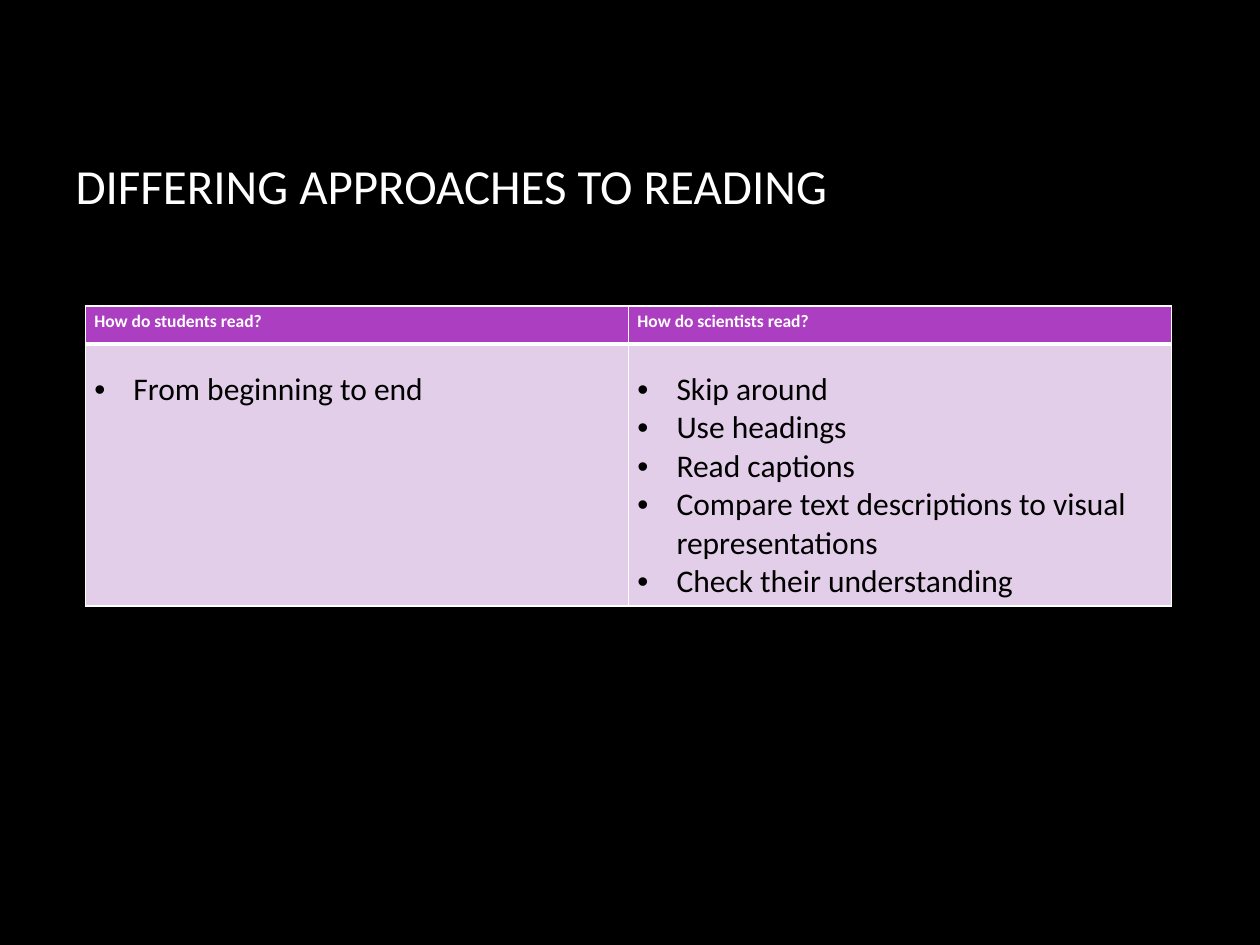
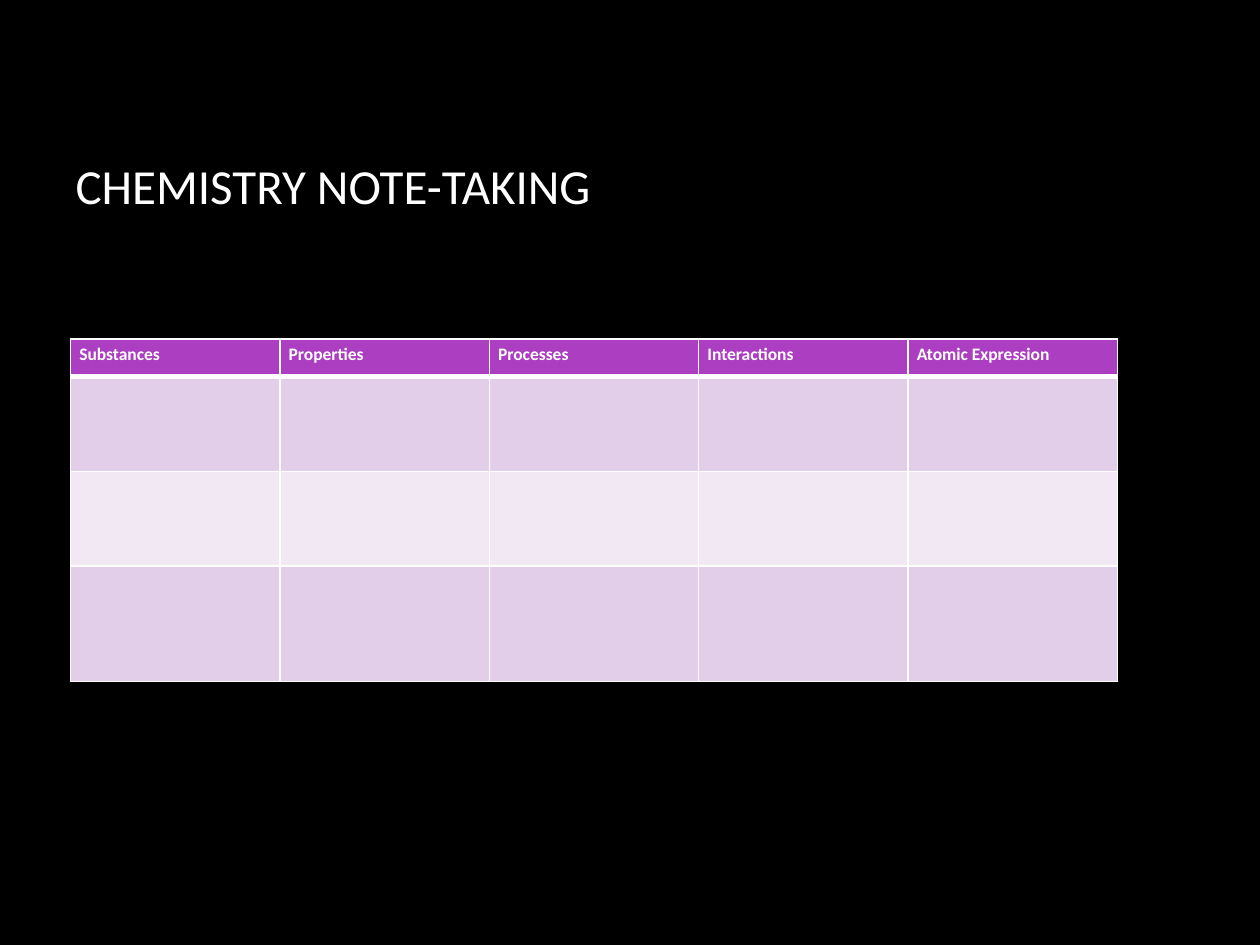
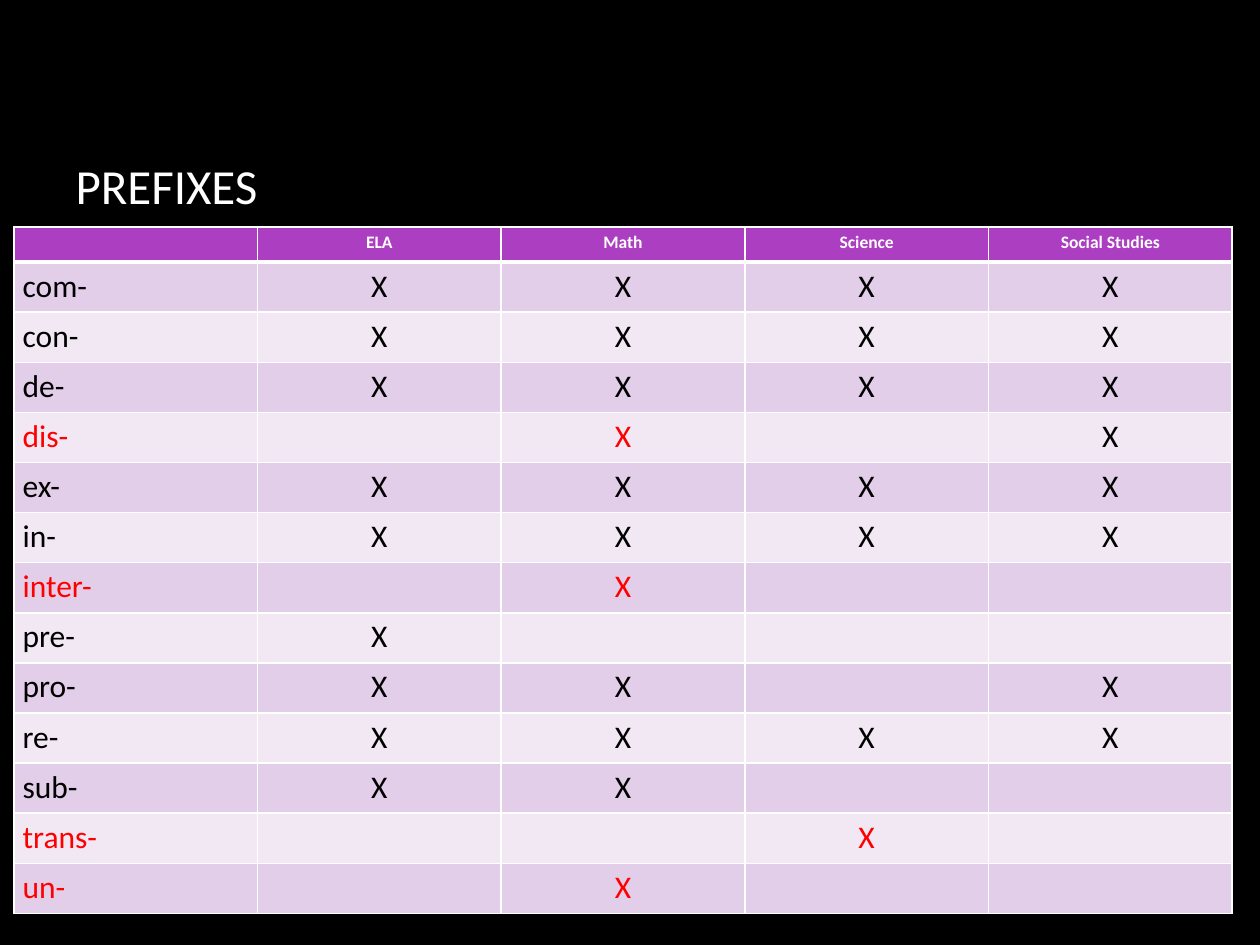
import lxml.etree
import pptx
import pptx.dml.color
import pptx.enum.text
import pptx.oxml.ns
import pptx.util

COLS, ROWS = 100, 75
HUES = {"back": "000000", "text": "000000", "line": "FFFFFF", "head": "AC3EC1",
        "odd": "E3CEE9", "even": "F1E8F4", "red": "FF0000"}
TITLE = {"name": "Calibri", "size": pptx.util.Pt(28), "bold": False}
HEAD = {"name": "Calibri", "size": pptx.util.Pt(10), "bold": True}
BODY = {"name": "Calibri", "size": pptx.util.Pt(18), "bold": False}
ALIGN = pptx.enum.text.PP_ALIGN
PADS = {"margin_left": 0.7, "margin_right": 0.7, "margin_top": 0.4, "margin_bottom": 0.4}


def hue(code):
    return pptx.dml.color.RGBColor.from_string(code)


def put(item, vals):
    for key, val in vals.items():
        setattr(item, key, val)


def node(root, tag, **vals):
    return lxml.etree.SubElement(root, pptx.oxml.ns.qn(tag), vals)


class Deck:
    def __init__(self):
        self.show = pptx.Presentation()
        self.show.slide_width = pptx.util.Inches(10)
        self.show.slide_height = pptx.util.Inches(7.5)
        self.wide = self.show.slide_width / COLS
        self.high = self.show.slide_height / ROWS
        fill = self.show.slide_master.background.fill
        fill.solid()
        fill.fore_color.rgb = hue(HUES["back"])
        self.slide = None

    def x(self, num):
        return round(num * self.wide)

    def y(self, num):
        return round(num * self.high)

    def label(self, para, text, style, code):
        run = para.add_run()
        run.text = text
        put(run.font, style)
        run.font.color.rgb = hue(code)

    def page(self, text):
        self.slide = self.show.slides.add_slide(self.show.slide_layouts[5])
        box = self.slide.shapes.title
        put(box, {"left": self.x(5), "top": self.y(6.7),
                  "width": self.x(85), "height": self.y(15.9)})
        put(box.text_frame, {"vertical_anchor": pptx.enum.text.MSO_ANCHOR.MIDDLE,
                             "auto_size": pptx.enum.text.MSO_AUTO_SIZE.NONE,
                             "word_wrap": True})
        para = box.text_frame.paragraphs[0]
        para.alignment = ALIGN.LEFT
        self.label(para, text, TITLE, HUES["line"])

    def table(self, left, top, width, highs, heads, align=ALIGN.LEFT):
        shape = self.slide.shapes.add_table(
            len(highs), len(heads), self.x(left), self.y(top),
            self.x(width), self.y(sum(highs)))
        table = shape.table
        table.horz_banding = False
        for col in table.columns:
            col.width = self.x(width / len(heads))
        for num, high in enumerate(highs):
            table.rows[num].height = self.y(high)
            for cell in table.rows[num].cells:
                self.cell(cell, num)
        for cell, name in zip(table.rows[0].cells, heads):
            self.text(cell, name, HEAD, HUES["line"], align)
        return table

    def cell(self, cell, row):
        put(cell, {key: self.x(val) for key, val in PADS.items()})
        prop = cell._tc.get_or_add_tcPr()
        for side in "LRTB":
            thick = (row, side) in ((0, "B"), (1, "T"))
            line = node(prop, "a:ln" + side, w=str(int(pptx.util.Pt(3 if thick else 1))))
            node(node(line, "a:solidFill"), "a:srgbClr", val=HUES["line"])
        cell.fill.solid()
        name = "head" if row == 0 else "odd" if row % 2 else "even"
        cell.fill.fore_color.rgb = hue(HUES[name])

    def text(self, cell, text, style=BODY, code=HUES["text"], align=ALIGN.LEFT):
        para = cell.text_frame.paragraphs[0]
        para.alignment = align
        if text:
            self.label(para, text, style, code)
        else:
            node(para._p, "a:endParaRPr", sz=str(int(style["size"].pt * 100)))

    def points(self, cell, lines):
        cell.margin_top = self.y(2.1)
        frame = cell.text_frame
        dent = self.x(3.1)
        for num, line in enumerate(lines):
            para = frame.add_paragraph() if num else frame.paragraphs[0]
            prop = para._p.get_or_add_pPr()
            prop.set("marL", str(dent))
            prop.set("indent", str(-dent))
            node(prop, "a:buFont", typeface="Arial")
            node(prop, "a:buChar", char="•")
            self.label(para, line, BODY, HUES["text"])


def habits(deck):
    deck.page("DIFFERING APPROACHES TO READING")
    names = ["How do students read?", "How do scientists read?"]
    table = deck.table(6.8, 24.3, 86.2, [3, 20.4], names)
    lists = [
        ["From beginning to end"],
        ["Skip around", "Use headings", "Read captions",
         "Compare text descriptions to visual representations",
         "Check their understanding"],
    ]
    for cell, lines in zip(table.rows[1].cells, lists):
        deck.points(cell, lines)


def notes(deck):
    deck.page("CHEMISTRY NOTE-TAKING")
    names = ["Substances", "Properties", "Processes", "Interactions", "Atomic Expression"]
    deck.table(5.6, 26.9, 83.1, [3, 7.5, 7.5, 9.2], names)


def stems(deck):
    deck.page("PREFIXES")
    names = ["", "ELA", "Math", "Science", "Social Studies"]
    marks = {
        "com-": "XXXX", "con-": "XXXX", "de-": "XXXX", "dis-": "-R-X",
        "ex-": "XXXX", "in-": "XXXX", "inter-": "-R--", "pre-": "X---",
        "pro-": "XX-X", "re-": "XXXX", "sub-": "XX--", "trans-": "--R-",
        "un-": "-R--",
    }
    table = deck.table(1.1, 18, 96.7, [2.8] + [3.98] * len(marks), names, ALIGN.CENTER)
    tones = {"X": HUES["text"], "R": HUES["red"]}
    for num, (stem, row) in enumerate(marks.items(), 1):
        cells = list(table.rows[num].cells)
        deck.text(cells[0], stem, code=tones["R" if "R" in row else "X"])
        for cell, mark in zip(cells[1:], row):
            if mark in tones:
                deck.text(cell, "X", code=tones[mark], align=ALIGN.CENTER)


def main():
    deck = Deck()
    for make in (habits, notes, stems):
        make(deck)
    deck.show.save("out.pptx")


if __name__ == "__main__":
    main()
